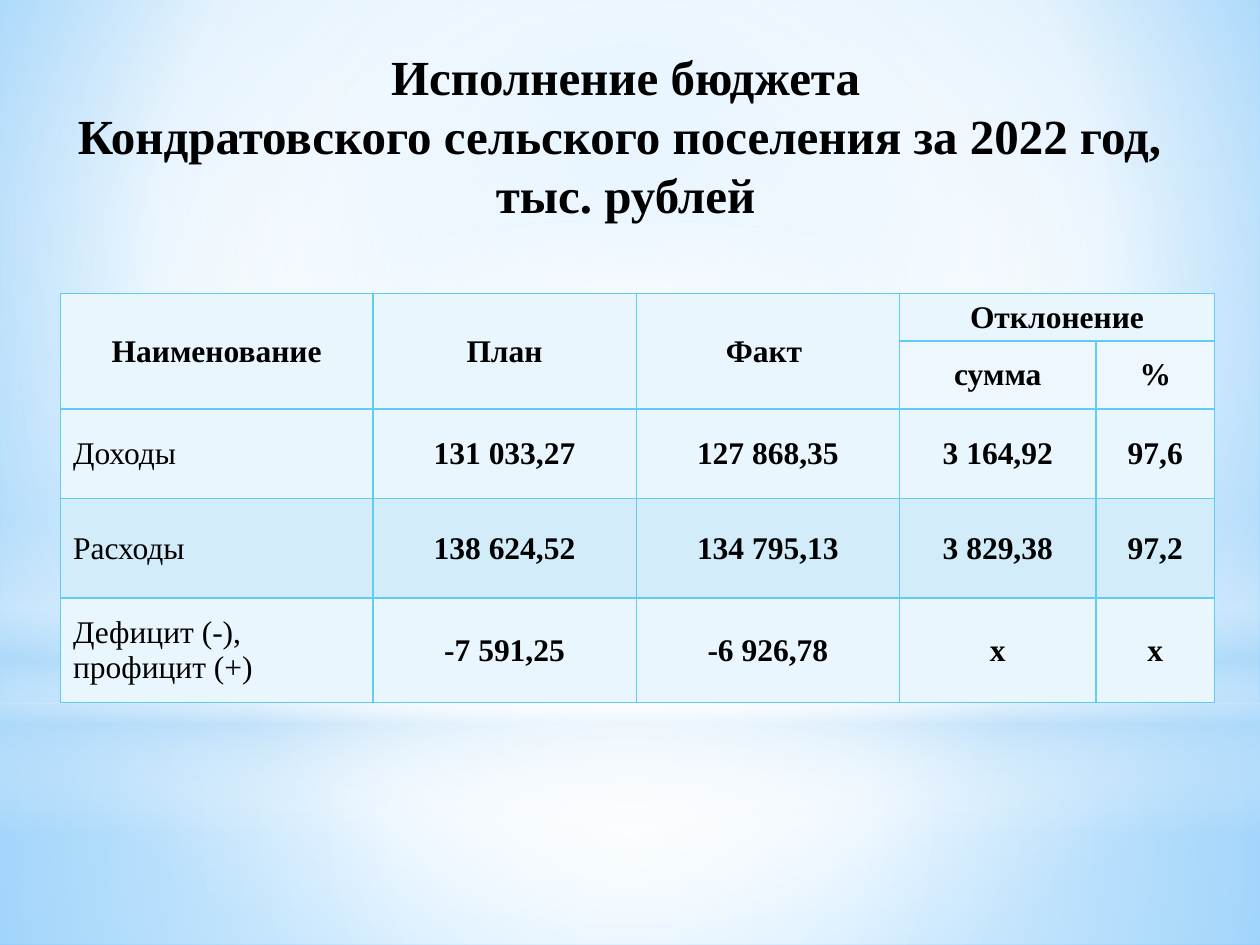
"""Build a budget execution slide with a title and a table."""
import lxml.etree
import pptx
import pptx.dml.color
import pptx.enum.shapes
import pptx.enum.text
import pptx.oxml.ns
import pptx.util

Inches = pptx.util.Inches
qn = pptx.oxml.ns.qn
SubElement = lxml.etree.SubElement
ALIGN = pptx.enum.text.PP_ALIGN
MIDDLE = pptx.enum.text.MSO_ANCHOR.MIDDLE
SHAPE = pptx.enum.shapes.MSO_SHAPE


def write_text(frame, text, size=18, bold=True, align=ALIGN.CENTER, color="000000"):
    frame.word_wrap = True
    frame.vertical_anchor = MIDDLE
    frame.text = text
    for paragraph in frame.paragraphs:
        paragraph.alignment = align
        for run in paragraph.runs:
            run.font.name = "Times New Roman"
            run.font.size = pptx.util.Pt(size)
            run.font.bold = bold
            run.font.color.rgb = pptx.dml.color.RGBColor.from_string(color)


def set_gradient(fill, element, stops, focus=None):
    fill.gradient()
    gradient = next(element.iter(qn("a:gradFill")))
    for child in list(gradient):
        gradient.remove(child)
    stop_list = SubElement(gradient, qn("a:gsLst"))
    for position, color, opacity in stops:
        stop = SubElement(stop_list, qn("a:gs"), pos=str(position * 1000))
        color_element = SubElement(stop, qn("a:srgbClr"), val=color)
        if opacity < 100:
            SubElement(color_element, qn("a:alpha"), val=str(opacity * 1000))
    if focus:
        shade = SubElement(gradient, qn("a:path"), path="circle")
        edges = {side: str(value * 1000) for side, value in zip("ltrb", focus)}
        SubElement(shade, qn("a:fillToRect"), **edges)
    else:
        SubElement(gradient, qn("a:lin"), ang="5400000", scaled="0")


presentation = pptx.Presentation()
presentation.slide_width = Inches(10)
presentation.slide_height = Inches(7.5)
slide = presentation.slides.add_slide(presentation.slide_layouts[6])

set_gradient(
    slide.background.fill,
    slide.element,
    [(0, "9ED5FF", 100), (60, "FFFFFF", 100), (100, "5BB9FF", 100)],
    (20, 10, 20, 60),
)

WHITE, SKY = "FFFFFF", "B4DCFA"
CENTER = (50, 50, 50, 50)
glows = [
    (SHAPE.RECTANGLE, 5.58, 1.92, [(0, WHITE, 91), (37, WHITE, 76), (100, SKY, 79)], CENTER),
    (SHAPE.RECTANGLE, 0, 5.58, [(0, WHITE, 89), (48, WHITE, 62), (100, SKY, 79)], CENTER),
    (SHAPE.RECTANGLE, 4.12, 2.5,
     [(0, WHITE, 0), (29, WHITE, 30), (45, SKY, 40), (55, WHITE, 26), (65, SKY, 60), (100, WHITE, 0)],
     None),
    (SHAPE.OVAL, 1.75, 5.58, [(0, WHITE, 100), (56, WHITE, 0)], CENTER),
]
for kind, top, height, stops, focus in glows:
    shape = slide.shapes.add_shape(kind, 0, Inches(top), Inches(10), Inches(height))
    shape.shadow.inherit = False
    shape.line.fill.background()
    set_gradient(shape.fill, shape.element, stops, focus)

rows = [
    ["Наименование", "План", "Факт ", "Отклонение", ""],
    ["", "", "", "сумма", "%"],
    ["Доходы", "131 033,27", "127 868,35", "3 164,92", "97,6"],
    ["Расходы", "138 624,52", "134 795,13", "3 829,38", "97,2"],
    ["Дефицит (-), профицит (+)", "-7 591,25", "-6 926,78", "х", "х"],
]
row_fills = ["EAF6FD", "EDF7FD", "EAF6FD", "D2ECFA", "EAF6FD"]
column_widths = [2.48, 2.09, 2.09, 1.56, 0.94]
row_heights = [0.3, 0.54, 0.71, 0.79, 0.83]

table = slide.shapes.add_table(
    len(rows), len(column_widths), Inches(0.48), Inches(2.33), Inches(9.17), Inches(3.28)
).table
for column, width in zip(table.columns, column_widths):
    column.width = Inches(width)
for row, height in zip(table.rows, row_heights):
    row.height = Inches(height)

for row_index, (values, color) in enumerate(zip(rows, row_fills)):
    for column_index, value in enumerate(values):
        cell = table.cell(row_index, column_index)
        is_label = row_index > 1 and column_index == 0
        if value:
            write_text(cell.text_frame, value, bold=not is_label,
                       align=ALIGN.LEFT if is_label else ALIGN.CENTER)
        cell.vertical_anchor = MIDDLE
        properties = cell._tc.get_or_add_tcPr()
        for side in "LRTB":
            border = SubElement(properties, qn(f"a:ln{side}"), w=str(pptx.util.Pt(1)))
            border_fill = SubElement(border, qn("a:solidFill"))
            SubElement(border_fill, qn("a:srgbClr"), val="5ECCF3")
        cell.fill.solid()
        cell.fill.fore_color.rgb = pptx.dml.color.RGBColor.from_string(color)

for column_index in range(3):
    table.cell(0, column_index).merge(table.cell(1, column_index))
table.cell(0, 3).merge(table.cell(0, 4))

title = slide.shapes.add_textbox(Inches(0.12), Inches(0.33), Inches(9.69), Inches(1.48))
write_text(
    title.text_frame,
    " Исполнение бюджета \vКондратовского сельского поселения за 2022 год, \nтыс. рублей",
    size=28,
)

presentation.save("out.pptx")
